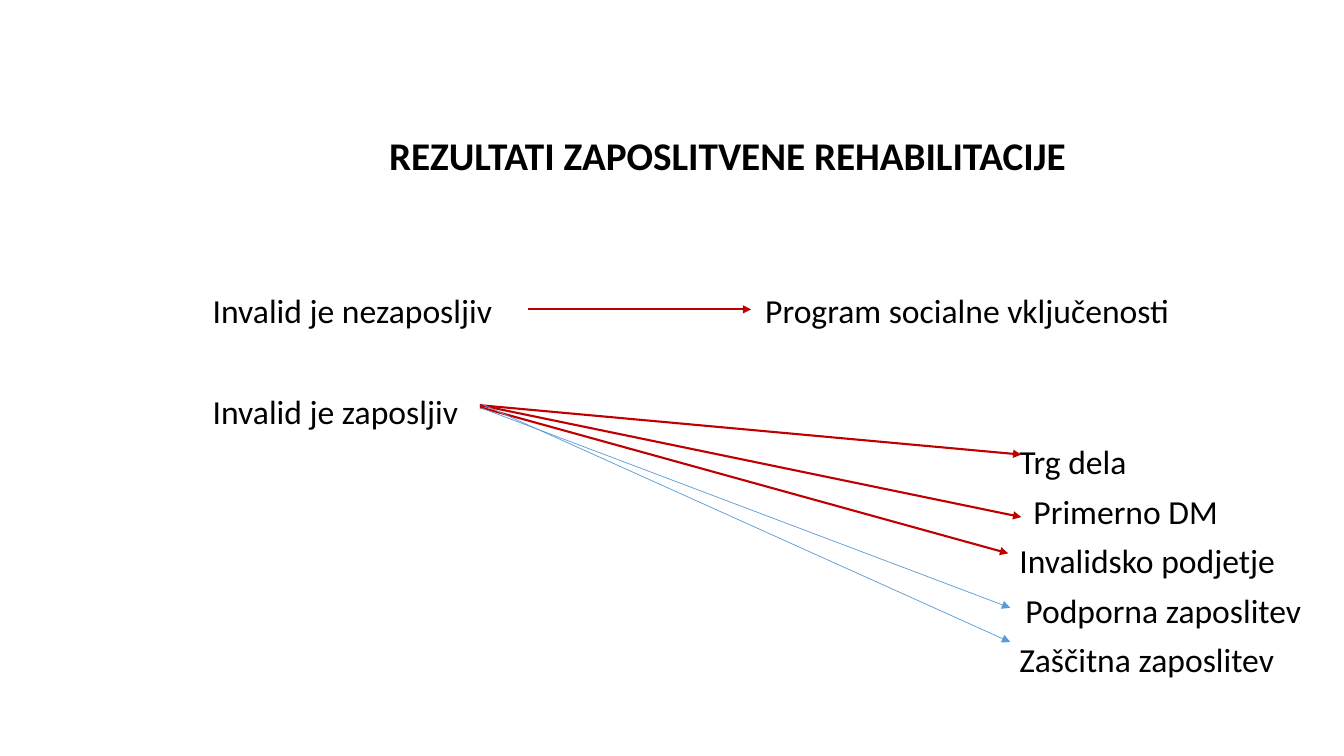
from dataclasses import dataclass

from lxml import etree
from pptx import Presentation
from pptx.dml.color import RGBColor
from pptx.enum.shapes import MSO_CONNECTOR
from pptx.enum.text import MSO_ANCHOR, PP_ALIGN
from pptx.oxml.ns import qn
from pptx.util import Inches, Pt

STRAIGHT = MSO_CONNECTOR.STRAIGHT
TOP = MSO_ANCHOR.TOP
LEFT, CENTER = PP_ALIGN.LEFT, PP_ALIGN.CENTER


@dataclass(frozen=True)
class Theme:
    font: str = "Calibri"
    text: str = "000000"
    red: str = "C00000"
    blue: str = "5B9BD5"
    title_size: float = 28
    body_size: float = 24
    line_spacing: float = 0.9
    space_before: float = 9.5
    thick: float = 1.5
    thin: float = 0.5


THEME = Theme()
ROW = 0.5

# text, indent from the left edge of the list
OUTCOMES = [
    ("Trg dela", 0),
    ("Primerno DM", 0.14),
    ("Invalidsko podjetje", 0),
    ("Podporna zaposlitev", 0.06),
    ("Zaščitna zaposlitev", 0),
]

# start and end of each arrow, measured from the body's top left corner
RED_ARROWS = [
    ((3.13, 0.15), (5.34, 0.15)),
    ((2.65, 1.1), (8.02, 1.59)),
    ((2.65, 1.1), (8.02, 2.21)),
    ((2.65, 1.12), (7.89, 2.57)),
]
BLUE_ARROWS = [
    ((2.67, 1.13), (7.91, 3.11)),
    ((2.67, 1.09), (7.91, 3.45)),
]


def add_text(s, box, lines, size=THEME.body_size, bold=False, align=LEFT):
    """Place (text, indent) lines in a box without margins."""
    sp = s.shapes.add_textbox(*(Inches(v) for v in box))
    tf = sp.text_frame
    frame = dict(word_wrap=True, vertical_anchor=TOP, margin_left=0,
                 margin_right=0, margin_top=0, margin_bottom=0)
    for name, value in frame.items():
        setattr(tf, name, value)
    for i, (text, indent) in enumerate(lines):
        p = tf.add_paragraph() if i else tf.paragraphs[0]
        p.alignment = align
        p.line_spacing = THEME.line_spacing
        if i:
            p.space_before = Pt(THEME.space_before)
        if indent:
            p._p.get_or_add_pPr().set("marL", str(Inches(indent)))
        r = p.add_run()
        r.text = text
        for name, value in dict(name=THEME.font, size=Pt(size), bold=bold).items():
            setattr(r.font, name, value)
        r.font.color.rgb = RGBColor.from_string(THEME.text)


def add_arrow(s, start, end, color, width):
    cxn = s.shapes.add_connector(STRAIGHT, *(Inches(v) for v in (*start, *end)))
    cxn.line.color.rgb = RGBColor.from_string(color)
    cxn.line.width = Pt(width)
    etree.SubElement(cxn.line._get_or_add_ln(), qn("a:tailEnd"), type="triangle")
    etree.SubElement(cxn._element.spPr, qn("a:effectLst"))


def add_title(s, box):
    add_text(s, box, [("REZULTATI ZAPOSLITVENE REHABILITACIJE", 0)],
             size=THEME.title_size, bold=True, align=CENTER)


def add_body(s, box):
    left, top, width, height = box
    add_text(s, (left, top, 3.1, ROW), [("Invalid je nezaposljiv", 0)])
    add_text(s, (left + 5.48, top, 4.6, ROW), [("Program socialne vključenosti", 0)])
    add_text(s, (left, top + 2 * ROW, 2.6, ROW), [("Invalid je zaposljiv", 0)])
    add_text(s, (left + 8, top + 3 * ROW, width - 8, height - 3 * ROW), OUTCOMES)
    for arrows, color, line_width in ((RED_ARROWS, THEME.red, THEME.thick),
                                      (BLUE_ARROWS, THEME.blue, THEME.thin)):
        for start, end in arrows:
            add_arrow(s, (left + start[0], top + start[1]),
                      (left + end[0], top + end[1]), color, line_width)


def main():
    prs = Presentation()
    prs.slide_width, prs.slide_height = Inches(13.33), Inches(7.5)
    s = prs.slides.add_slide(prs.slide_layouts[6])
    add_body(s, (2.11, 2.92, 11.22, 4))
    add_title(s, (2.91, 1.36, 8.61, 0.9))
    prs.save("out.pptx")


if __name__ == "__main__":
    main()
